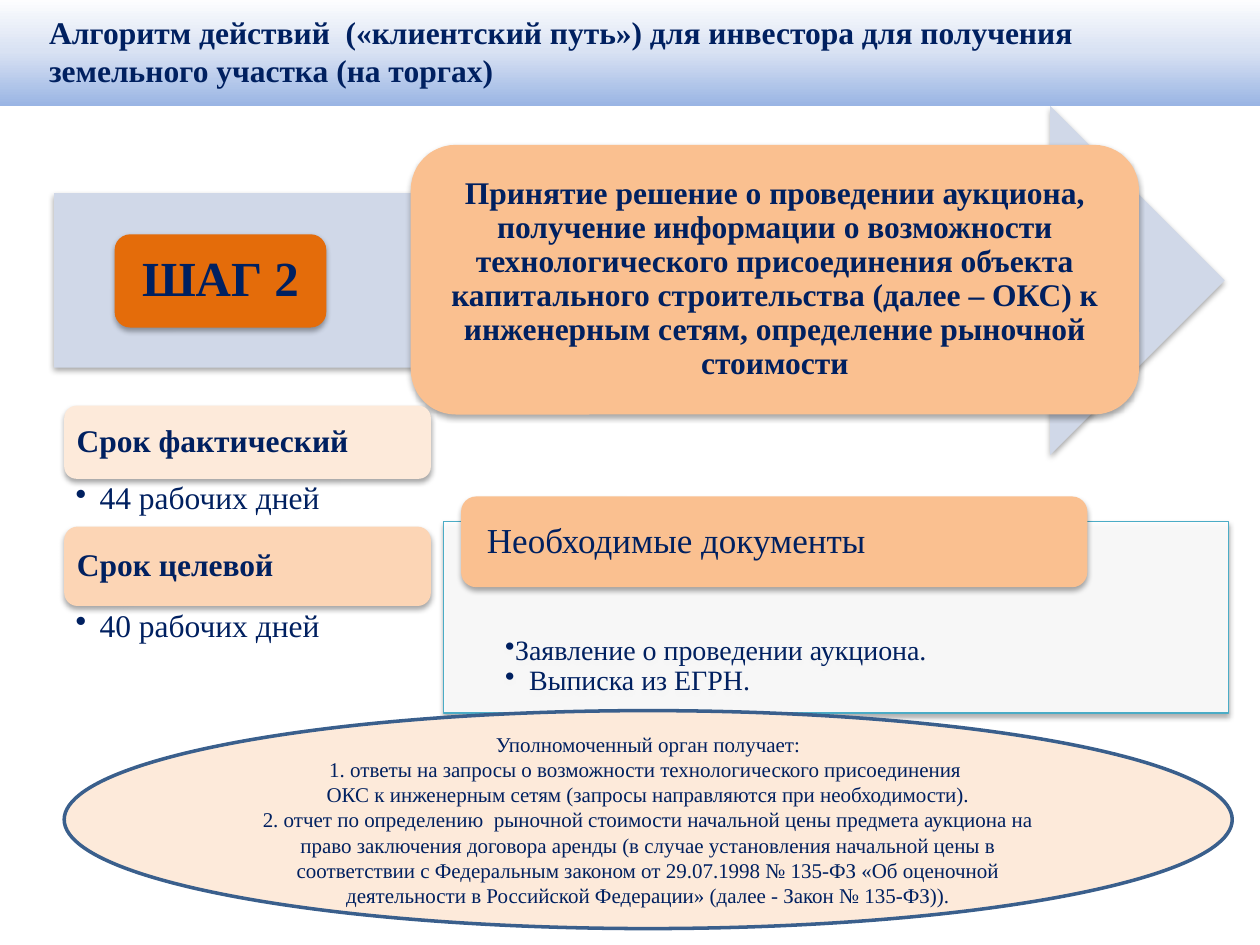
import copy

import pptx
import pptx.dml.color
import pptx.enum.shapes
import pptx.enum.text
import pptx.oxml
import pptx.oxml.ns
import pptx.util

SHAPES = pptx.enum.shapes.MSO_SHAPE
ALIGN = pptx.enum.text.PP_ALIGN
ANCHOR = pptx.enum.text.MSO_ANCHOR
WIDTH = pptx.util.Inches(10)
HEIGHT = pptx.util.Inches(7.5)
COLUMN = WIDTH / 100
ROW = HEIGHT / 75
FONT = "Times New Roman"
NAVY = "002060"
PEACH = "FAC090"
PALE = "FDEADA"
EVEN = (0.7, 0.7, 0.7, 0.7)
DEFAULT = (1, 0.5, 1, 0.5)

ACTION = (
    "Принятие решение о проведении аукциона, получение информации о возможности "
    "технологического присоединения объекта капитального строительства (далее – ОКС) "
    "к инженерным сетям, определение рыночной стоимости"
)
RESULTS = [
    "Уполномоченный орган получает:",
    "1. ответы на запросы о возможности технологического присоединения ",
    "ОКС к инженерным сетям (запросы направляются при необходимости).",
    "2. отчет по определению  рыночной стоимости начальной цены предмета аукциона на "
    "право заключения договора аренды (в случае установления начальной цены в "
    "соответствии с Федеральным законом от 29.07.1998 № 135-ФЗ «Об оценочной "
    "деятельности в Российской Федерации» (далее - Закон № 135-ФЗ)).",
]


def color(value):
    return pptx.dml.color.RGBColor.from_string(value)


def parse_element(tag, attributes="", children=""):
    namespace = pptx.oxml.ns.nsdecls("a")
    return pptx.oxml.parse_xml(f"<a:{tag} {namespace} {attributes}>{children}</a:{tag}>")


def grid(left, top, width, height):
    lengths = (left * COLUMN, top * ROW, width * COLUMN, height * ROW)
    return [round(length) for length in lengths]


def add_shadow(shape):
    effects = shape._element.spPr.find(pptx.oxml.ns.qn("a:effectLst"))
    effects.append(parse_element(
        "outerShdw",
        'blurRad="40000" dist="23000" dir="5400000" rotWithShape="0"',
        '<a:srgbClr val="000000"><a:alpha val="35000"/></a:srgbClr>',
    ))


def add_panel(slide, kind, box, fill, line=None, line_width=1, shadow=True):
    shape = slide.shapes.add_shape(kind, *grid(*box))
    shape.shadow.inherit = False
    shape.fill.solid()
    shape.fill.fore_color.rgb = color(fill)
    if line:
        shape.line.color.rgb = color(line)
        shape.line.width = pptx.util.Pt(line_width)
    else:
        shape.line.fill.background()
    if shadow:
        add_shadow(shape)
    return shape


def write(shape, lines, size, bold=False, align=ALIGN.LEFT, anchor=ANCHOR.MIDDLE,
          insets=EVEN, spacing=0.9, margins=()):
    frame = shape.text_frame
    frame.word_wrap = True
    frame.vertical_anchor = anchor
    left, top, right, bottom = grid(*insets)
    frame.margin_left, frame.margin_top = left, top
    frame.margin_right, frame.margin_bottom = right, bottom
    frame.text = "\n".join(lines)
    for paragraph, margin in zip(frame.paragraphs, margins):
        properties = paragraph._p.get_or_add_pPr()
        properties.set("marL", str(round(margin * COLUMN)))
        properties.set("indent", str(round(-1.9 * COLUMN)))
        properties.append(parse_element("buChar", 'char="•"'))
    for paragraph in frame.paragraphs:
        paragraph.alignment = align
        paragraph.line_spacing = spacing
        for run in paragraph.runs:
            run.font.name = FONT
            run.font.size = pptx.util.Pt(size)
            run.font.bold = bold
            run.font.color.rgb = color(NAVY)


def add_title(slide):
    shape = add_panel(slide, SHAPES.RECTANGLE, (0, -0.3, 100, 8.7), "FFFFFF", shadow=False)
    shape.fill.gradient()
    stops = shape._element.spPr.find(".//" + pptx.oxml.ns.qn("a:gsLst"))
    stops.insert(1, copy.deepcopy(stops[0]))
    for index, value in enumerate(["9AB5E4", "D9E2F3", "FFFFFF"]):
        stop = shape.fill.gradient_stops[index]
        stop.position = index / 2
        stop.color.rgb = color(value)
    shape.fill.gradient_angle = 90
    title = ("Алгоритм действий  («клиентский путь») для инвестора для получения "
             "\vземельного участка (на торгах)")
    write(shape, [title], 18, True, insets=(3.9, 0.5, 1, 0.5), spacing=1)


def add_step(slide):
    add_panel(slide, SHAPES.RIGHT_ARROW, (4.3, 8.4, 92.9, 27.7), "D0D8E8")
    step = add_panel(slide, SHAPES.ROUNDED_RECTANGLE, (9.1, 18.6, 16.8, 7.4), "E46C0A")
    write(step, ["ШАГ 2"], 28, True, ALIGN.CENTER, insets=(1.2, 1.2, 1.2, 1.2))
    action = add_panel(slide, SHAPES.ROUNDED_RECTANGLE, (32.6, 11.5, 57.8, 21.4), PEACH)
    write(action, [ACTION], 18, True, ALIGN.CENTER)


def add_terms(slide):
    left, top, width, term_height = 5.1, 32.2, 29.1, 3.8
    terms = [
        ("Срок фактический", "44 рабочих дней", 5.8, PALE),
        ("Срок целевой", "40 рабочих дней", 6.3, "FCD5B5"),
    ]
    for heading, term, height, fill in terms:
        card = add_panel(slide, SHAPES.ROUNDED_RECTANGLE, (left, top, width, height), fill)
        write(card, [heading], 18, True)
        top += height
        box = slide.shapes.add_textbox(*grid(left, top, width, term_height))
        write(box, [term], 18, anchor=ANCHOR.TOP, insets=(0.9, 0.3, 1.4, 0.3), margins=[1.9])
        top += term_height


def add_documents(slide):
    panel = add_panel(slide, SHAPES.RECTANGLE, (35.2, 41.4, 62.3, 15.2), "FFFFFF", "4BACC6", 0.75)
    fill_color = panel._element.spPr.find(pptx.oxml.ns.qn("a:solidFill"))[0]
    fill_color.append(parse_element("alpha", 'val="90000"'))
    write(panel, ["Заявление о проведении аукциона.", "Выписка из ЕГРН."], 16,
          align=ALIGN.JUSTIFY, anchor=ANCHOR.TOP, insets=(4.9, 9.1, 4.9, 1.2), margins=[0, 1.9])
    heading = add_panel(slide, SHAPES.ROUNDED_RECTANGLE, (36.6, 39.4, 49.7, 7.2), PEACH)
    write(heading, ["Необходимые документы"], 20, insets=(1.7, 0, 1.7, 0))


def add_results(slide):
    oval = add_panel(slide, SHAPES.OVAL, (5.1, 56.4, 92.7, 17.3), PALE, "3A5F8C", 2, False)
    write(oval, RESULTS, 12, align=ALIGN.CENTER, insets=DEFAULT, spacing=1)


def main():
    presentation = pptx.Presentation()
    presentation.slide_width = WIDTH
    presentation.slide_height = HEIGHT
    slide = presentation.slides.add_slide(presentation.slide_layouts[6])
    add_step(slide)
    add_terms(slide)
    add_title(slide)
    add_documents(slide)
    add_results(slide)
    presentation.save("out.pptx")


if __name__ == "__main__":
    main()
